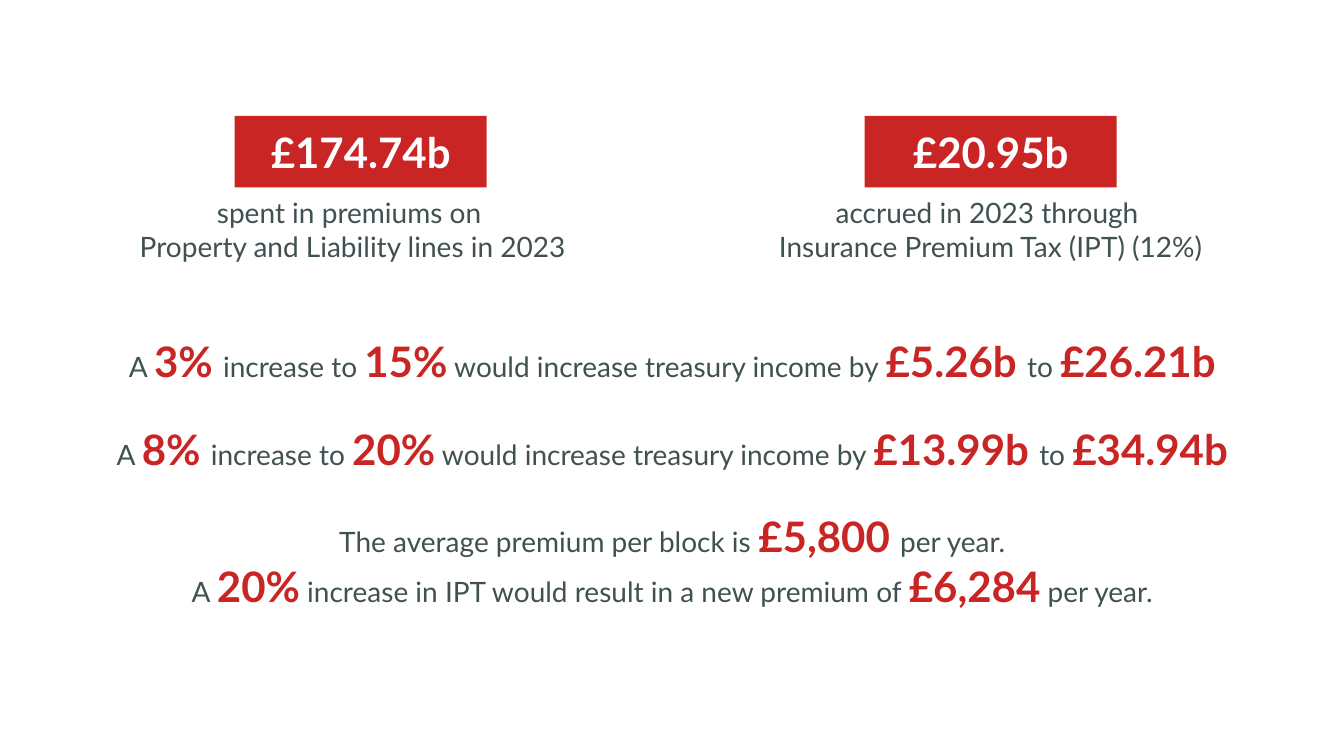
from dataclasses import dataclass
from pptx import Presentation
from pptx.dml.color import RGBColor as Rgb
from pptx.enum.shapes import MSO_SHAPE as Kind
from pptx.enum.text import MSO_ANCHOR as Anchor, PP_ALIGN as Align
from pptx.util import Pt


@dataclass(frozen=True)
class Theme:
    face: str = "Lato"
    red: Rgb = Rgb(0xCA, 0x25, 0x25)
    ink: Rgb = Rgb(0x40, 0x51, 0x51)
    white: Rgb = Rgb(0xFF, 0xFF, 0xFF)
    body: Pt = Pt(20)
    large: Pt = Pt(30)


LOOK = Theme()
PLAIN = dict(name=LOOK.face, size=LOOK.body, bold=False)
STRONG = dict(name=LOOK.face, size=LOOK.large, bold=True)

FACTS = [
    # badge, caption, left of column, shift of badge from its centre
    ("£174.74b", "spent in premiums on \vProperty and Liability lines in 2023", 49.7, 5.7),
    ("£20.95b", "accrued in 2023 through \vInsurance Premium Tax (IPT) (12%)", 505.4, 0),
]
CLAIMS = [
    "A *3% *increase to *15%* would increase treasury income by *£5.26b *to *£26.21b*",
    "A *8% *increase to *20%* would increase treasury income by *£13.99b *to *£34.94b*",
    "The average premium per block is *£5,800 *per year.\n"
    "A *20%* increase in IPT would result in a new premium of *£6,284* per year.",
]


def style(font, form, color):
    for key, value in form.items():
        setattr(font, key, value)
    font.color.rgb = color


def add_run(para, text, form, color):
    run = para.add_run()
    run.text = text
    style(run.font, form, color)


def write(slide, box, text):
    """Set centred text: *stars* mark red figures, \\v breaks a line."""
    frame = slide.shapes.add_textbox(*map(Pt, box)).text_frame
    frame.word_wrap = True
    frame.vertical_anchor = Anchor.MIDDLE
    for side in ("left", "top", "right", "bottom"):
        setattr(frame, f"margin_{side}", 0)
    for row, line in enumerate(text.split("\n")):
        para = frame.add_paragraph() if row else frame.paragraphs[0]
        para.alignment = Align.CENTER
        for turn, part in enumerate(line.split("*")):
            form, color = (STRONG, LOOK.red) if turn % 2 else (PLAIN, LOOK.ink)
            for step, piece in enumerate(part.split("\v")):
                if step:
                    para.add_line_break()
                if piece:
                    add_run(para, piece, form, color)


def add_badge(slide, box, text):
    badge = slide.shapes.add_shape(Kind.RECTANGLE, *map(Pt, box))
    badge.shadow.inherit = False
    badge.fill.solid()
    badge.fill.fore_color.rgb = LOOK.red
    badge.line.fill.background()
    frame = badge.text_frame
    frame.vertical_anchor = Anchor.MIDDLE
    para = frame.paragraphs[0]
    para.alignment = Align.CENTER
    add_run(para, text, STRONG, LOOK.white)


def add_fact(slide, box, figure, text, shift):
    """Place a badge at the top of the box and its caption at the foot."""
    left, top, width, height = box
    wide, tall, foot = 180, 51, 48.2
    add_badge(slide, (left + (width - wide) / 2 + shift, top, wide, tall), figure)
    write(slide, (left, top + height - foot, width, foot), text)


def add_claims(slide, box):
    left, top, width, line = box
    pitch = 62.3
    for row, claim in enumerate(CLAIMS):
        height = line * (1 + claim.count("\n"))
        write(slide, (left, top + row * pitch, width, height), claim)


def main():
    deck = Presentation()
    deck.slide_width, deck.slide_height = Pt(960), Pt(540)
    slide = deck.slides.add_slide(deck.slide_layouts[6])
    for figure, text, left, shift in FACTS:
        add_fact(slide, (left, 82.8, 404.6, 105.1), figure, text, shift)
    add_claims(slide, (51.1, 239.8, 858.2, 36.2))
    deck.save("out.pptx")


if __name__ == "__main__":
    main()
